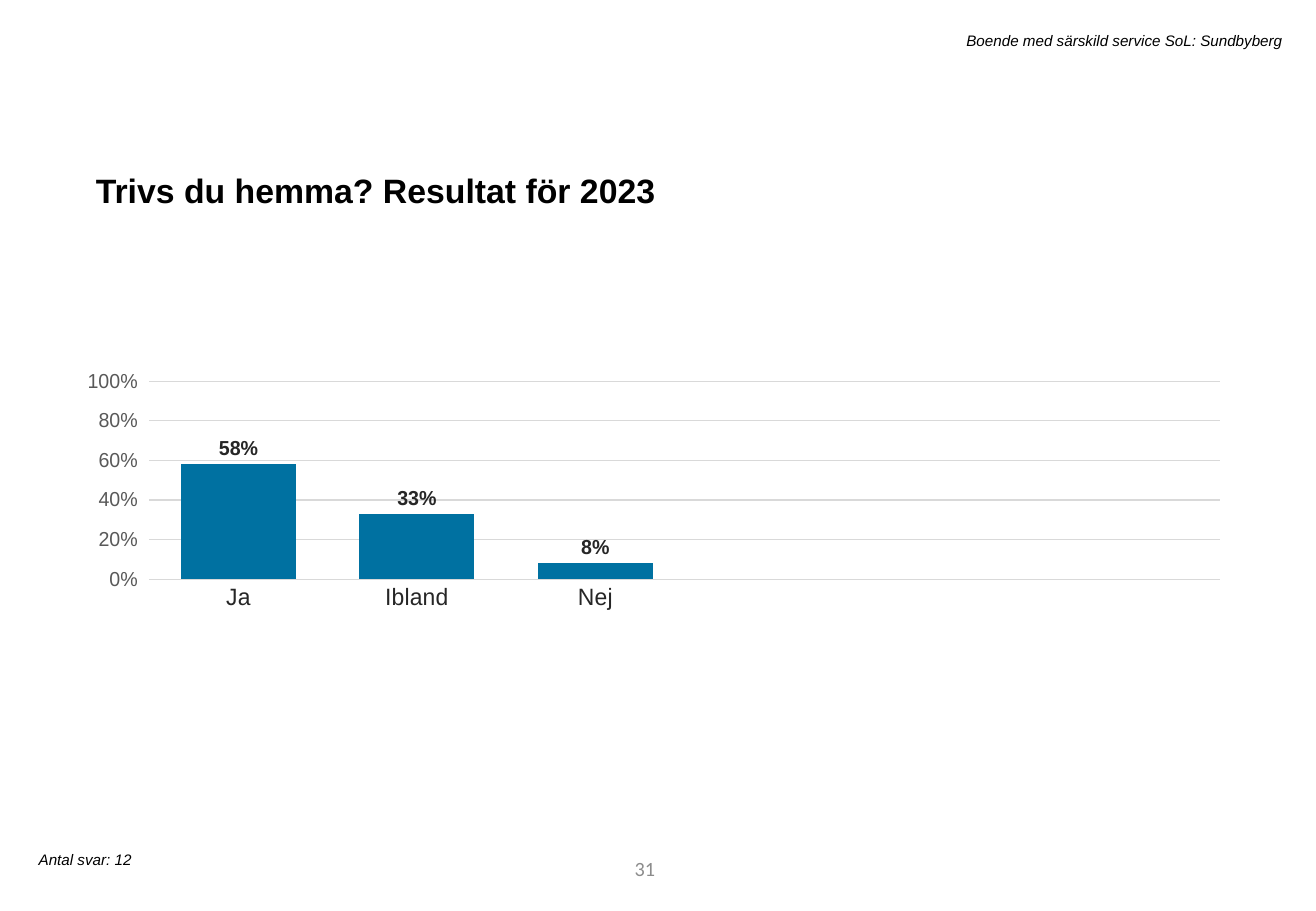
import dataclasses
import typing

import lxml.etree
import pptx
import pptx.chart.data
import pptx.dml.color
import pptx.enum.chart
import pptx.enum.text
import pptx.oxml
import pptx.oxml.ns
import pptx.util

Inches = pptx.util.Inches
Pt = pptx.util.Pt
ALIGN = pptx.enum.text.PP_ALIGN
ANCHOR = pptx.enum.text.MSO_ANCHOR
FIT = pptx.enum.text.MSO_AUTO_SIZE
TICK = pptx.enum.chart.XL_TICK_MARK
GRID = "D9D9D9"


@dataclasses.dataclass
class Label:
    text: str
    box: tuple[float, float, float, float]
    font: dict[str, typing.Any]
    para: dict[str, typing.Any] = dataclasses.field(default_factory=dict)
    frame: dict[str, typing.Any] = dataclasses.field(
        default_factory=lambda: {"auto_size": FIT.SHAPE_TO_FIT_TEXT}
    )


NOTE = {"name": "Arial", "size": Pt(9), "italic": True}
LABELS = [
    Label("31", (3.05, 6.95, 2.44, 0.4),
          {"name": "Calibri", "size": Pt(12), "color": "8C8C8C"},
          {"alignment": ALIGN.RIGHT},
          {"vertical_anchor": ANCHOR.MIDDLE}),
    Label("Trivs du hemma? Resultat för 2023", (0.69, 1.28, 9.4, 0.47),
          {"name": "Arial", "size": Pt(20), "bold": True},
          {"line_spacing": 1.2, "space_before": Pt(10)}),
    Label("Antal svar: 12", (0.22, 6.95, 2.84, 0.25), NOTE),
    Label("Boende med särskild service SoL: Sundbyberg",
          (1.79, 0.21, 8.86, 0.25), NOTE, {"alignment": ALIGN.RIGHT}),
]
SHARES = {"Ja": 0.58, "Ibland": 0.33, "Nej": 0.08}
SPARE = 3
PLOT = {"x": 0.025, "y": 0.154, "w": 0.966, "h": 0.413}


def paint(code: str) -> pptx.dml.color.RGBColor:
    return pptx.dml.color.RGBColor.from_string(code)


def apply(item: typing.Any, form: dict[str, typing.Any]) -> None:
    for key, value in form.items():
        setattr(item, key, value)


def style(font: typing.Any, form: dict[str, typing.Any]) -> None:
    form = {"color": "000000", **form}
    font.color.rgb = paint(form.pop("color"))
    apply(font, form)


def rule(line: typing.Any) -> None:
    line.color.rgb = paint(GRID)
    line.width = Pt(0.75)


def write(slide: typing.Any, label: Label) -> None:
    frame = slide.shapes.add_textbox(*map(Inches, label.box)).text_frame
    apply(frame, {"word_wrap": True, **label.frame})
    para = frame.paragraphs[0]
    apply(para, label.para)
    run = para.add_run()
    run.text = label.text
    style(run.font, label.font)


def place(chart: typing.Any) -> None:
    name = pptx.oxml.ns.qn
    area = chart.plots[0]._element.getparent()
    for old in area.findall(name("c:layout")):
        area.remove(old)
    layout = pptx.oxml.parse_xml(
        f'<c:layout {pptx.oxml.ns.nsdecls("c")}><c:manualLayout/></c:layout>'
    )
    marks = {"layoutTarget": "inner", "xMode": "edge", "yMode": "edge", **PLOT}
    for tag, value in marks.items():
        lxml.etree.SubElement(layout[0], name(f"c:{tag}")).set("val", str(value))
    area.insert(0, layout)


def graph(slide: typing.Any) -> None:
    data = pptx.chart.data.CategoryChartData(number_format="0%")
    data.categories = [*SHARES, *[""] * SPARE]
    data.add_series("Series 1", [*SHARES.values(), *[None] * SPARE])
    chart = slide.shapes.add_chart(
        pptx.enum.chart.XL_CHART_TYPE.COLUMN_CLUSTERED,
        *map(Inches, (0.72, 2.53, 9.4, 3.95)), data,
    ).chart
    apply(chart, {"has_legend": False, "has_title": False})
    style(chart.font, {"name": "Arial", "size": Pt(10)})
    place(chart)

    apply(chart.category_axis, {"major_tick_mark": TICK.NONE})
    style(chart.category_axis.tick_labels.font,
          {"name": "Arial", "size": Pt(14), "color": "262626"})
    rule(chart.category_axis.format.line)

    scale = chart.value_axis
    apply(scale, {"minimum_scale": 0, "maximum_scale": 1, "major_unit": 0.2,
                  "has_major_gridlines": True, "major_tick_mark": TICK.OUTSIDE})
    apply(scale.tick_labels,
          {"number_format": "0%", "number_format_is_linked": False})
    style(scale.tick_labels.font,
          {"name": "Arial", "size": Pt(12), "color": "595959"})
    scale.format.line.fill.background()
    rule(scale.major_gridlines.format.line)

    plot = chart.plots[0]
    apply(plot, {"gap_width": 55, "vary_by_categories": False})
    bars = plot.series[0]
    bars.format.fill.solid()
    bars.format.fill.fore_color.rgb = paint("0071A1")
    apply(bars.data_labels, {
        "show_value": True, "number_format": "0%",
        "number_format_is_linked": False,
        "position": pptx.enum.chart.XL_LABEL_POSITION.OUTSIDE_END,
    })
    style(bars.data_labels.font,
          {"name": "Arial", "size": Pt(12), "bold": True, "color": "262626"})


def main() -> None:
    deck = pptx.Presentation()
    apply(deck, {"slide_width": Inches(10.83), "slide_height": Inches(7.5)})
    slide = deck.slides.add_slide(deck.slide_layouts[6])
    graph(slide)
    for label in LABELS:
        write(slide, label)
    deck.save("out.pptx")


if __name__ == "__main__":
    main()
